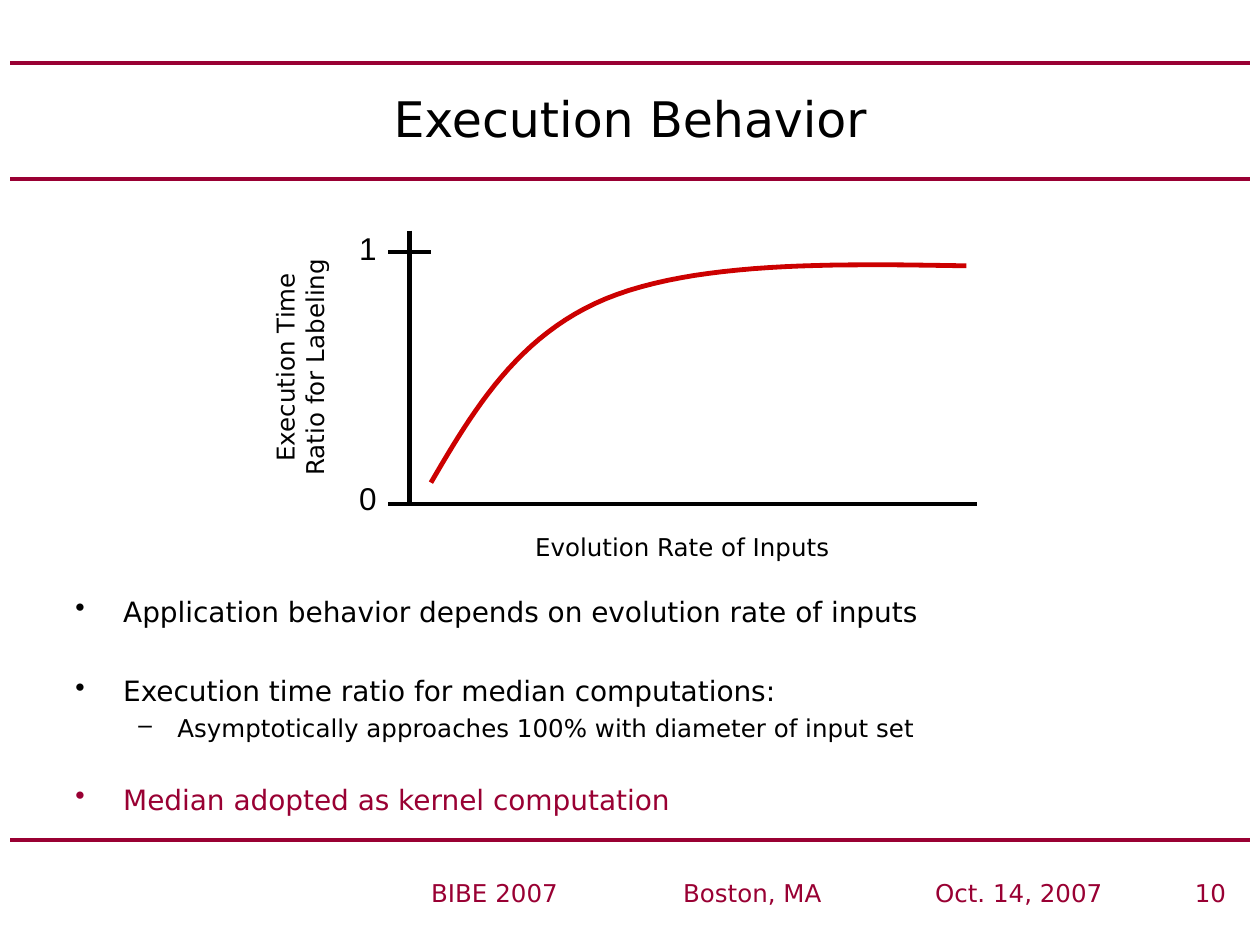
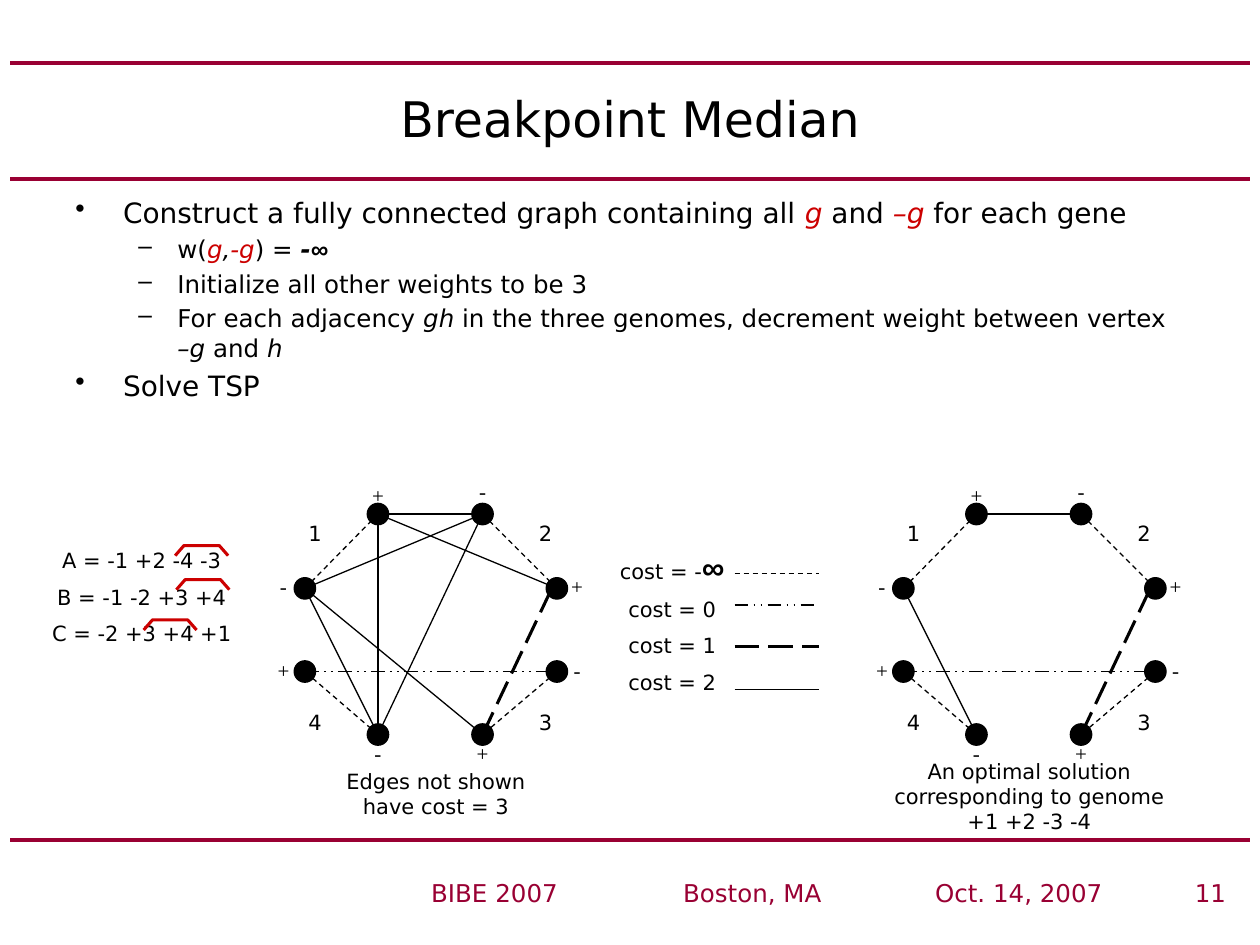
from lxml import etree
from pptx import Presentation
from pptx.dml.color import RGBColor
from pptx.enum.dml import MSO_LINE
from pptx.enum.shapes import MSO_CONNECTOR, MSO_SHAPE
from pptx.enum.text import MSO_ANCHOR, PP_ALIGN
from pptx.oxml.ns import qn
from pptx.util import Inches, Pt

MAROON = RGBColor(0x99, 0x00, 0x33)
RED = RGBColor(0xCC, 0x00, 0x00)
BLACK = RGBColor(0x00, 0x00, 0x00)
SANS, ARIAL, TIMES = "DejaVu Sans", "Arial", "Times New Roman"
LEFT, CENTER, RIGHT = PP_ALIGN.LEFT, PP_ALIGN.CENTER, PP_ALIGN.RIGHT
MIDDLE = MSO_ANCHOR.MIDDLE
STRAIGHT, OVAL = MSO_CONNECTOR.STRAIGHT, MSO_SHAPE.OVAL
DASH, DASH_DOT_DOT, LONG_DASH = MSO_LINE.DASH, MSO_LINE.DASH_DOT_DOT, MSO_LINE.LONG_DASH

# ---- Shared content
RULE_TOPS = (0.5, 1.42, 6.67)
FOOTER = "BIBE 2007\tBoston, MA\tOct. 14, 2007\t {}"
FOOTER_TABS = (2, 4, 6)
# level: bullet, left margin, hanging indent, text size, space before
LEVELS = {0: ("•", 0.38, 0.38, 16, 3.5), 1: ("–", 0.81, 0.31, 14, 3)}

# ---- Slide 10: (level, text, colour, space before or None for the level's own)
BEHAVIOR = [
    (0, "Application behavior depends on evolution rate of inputs", BLACK, None),
    (0, "Execution time ratio for median computations:", BLACK, 26),
    (1, "Asymptotically approaches 100% with diameter of input set", BLACK, None),
    (0, "Median adopted as kernel computation", MAROON, 23),
]
AXES = [((3.25, 1.83), (3.25, 4)), ((3.08, 2), (3.42, 2)), ((3.08, 4), (7.75, 4))]
TICKS = [("1", 1.77), ("0", 3.75)]
RATIO_CURVE = [
    ((3.42, 3.83), (3.76, 3.25), (4.11, 2.66), (4.81, 2.37)),
    ((4.81, 2.37), (5.52, 2.08), (6.59, 2.09), (7.67, 2.11)),
]

# ---- Slide 11: a run is plain text or (text, style)
ITALIC = {"italic": True}
GENE = {"italic": True, "color": RED}
INFINITY = {"bold": True, "italic": True, "font": ARIAL}
MEDIAN = [
    (0, ["Construct a fully connected graph containing all ", ("g ", GENE), "and ",
         ("–g", GENE), " for each gene"], BLACK, None),
    (1, ["w(", ("g", GENE), (",", ITALIC), ("-g", GENE), ") = ",
         ("-", {"bold": True, "italic": True}), ("∞", INFINITY)], BLACK, None),
    (1, "Initialize all other weights to be 3", BLACK, None),
    (1, ["For each adjacency ", ("gh", ITALIC),
         " in the three genomes, decrement weight between vertex ",
         ("–g", ITALIC), " and ", ("h", ITALIC)], BLACK, None),
    (0, "Solve TSP", BLACK, None),
]
GENOMES = ["A = -1 +2 -4 -3", "B = -1 -2 +3 +4", "C = -2 +3 +4 +1"]
ADJACENCY_MARKS = [(1.39, 4.33), (1.4, 4.6), (1.14, 4.92)]

# vertex: centre, and offset of its sign
VERTICES = {
    "1+": ((3, 4.08), (0, -0.15)),
    "2-": ((3.83, 4.08), (0, -0.18)),
    "1-": ((2.42, 4.67), (-0.17, -0.02)),
    "4+": ((2.42, 5.33), (-0.17, -0.01)),
    "4-": ((3, 5.83), (0, 0.15)),
    "3+": ((3.83, 5.83), (0, 0.15)),
    "2+": ((4.42, 4.67), (0.16, -0.02)),
    "3-": ((4.42, 5.33), (0.16, -0.01)),
}
GENE_NUMBERS = {"1": (2.5, 4.23), "2": (4.33, 4.23), "4": (2.5, 5.73), "3": (4.33, 5.73)}
# cost: line width, dash
COSTS = {
    "-∞": (0.75, DASH),
    "0": (1, DASH_DOT_DOT),
    "1": (1.75, LONG_DASH),
    "2": (0.75, None),
}
SHARED_EDGES = [
    ("1-", "1+", "-∞"), ("2+", "2-", "-∞"), ("4-", "4+", "-∞"), ("3-", "3+", "-∞"),
    ("4+", "3-", "0"), ("3+", "2+", "1"), ("4-", "1-", "2"), ("1+", "2-", "2"),
]
EXTRA_EDGES = [("4-", "1+", "2"), ("4-", "2-", "2"), ("3+", "1-", "2"),
               ("1-", "2-", "2"), ("1+", "2+", "2")]
# x offset, edges, caption, caption box
GRAPHS = [
    (0, SHARED_EDGES + EXTRA_EDGES, "Edges not shown have cost = 3",
     (2.5, 6.05, 1.92, 0.5)),
    (4.75, SHARED_EDGES, "An optimal solution corresponding to genome +1 +2 -3 -4",
     (6.92, 5.97, 2.5, 0.7)),
]
LEGEND = [["cost = -", ("∞", {**INFINITY, "size": 18})],
          "cost = 0", "cost = 1", "cost = 2"]
LEGEND_LINE_TOPS = (4.55, 4.8, 5.13, 5.47)
NODE = 0.17


# ---- Text
def set_font(font, size=None, name=None, color=None):
    if size:
        font.size = Pt(size)
    if name:
        font.name = name
    if color is not None:
        font.color.rgb = color


def fill_paragraph(paragraph, runs, size, name=SANS, color=BLACK, align=LEFT):
    paragraph.alignment = align
    set_font(paragraph.font, size, name, color)
    for part in [runs] if isinstance(runs, str) else runs:
        text, style = (part, {}) if isinstance(part, str) else part
        run = paragraph.add_run()
        run.text = text
        set_font(run.font, style.get("size"), style.get("font"), style.get("color"))
        if style.get("bold"):
            run.font.bold = True
        if style.get("italic"):
            run.font.italic = True


def add_frame(slide, box):
    shape = slide.shapes.add_textbox(*map(Inches, box))
    shape.text_frame.word_wrap = True
    return shape


def paragraphs_of(frame, count):
    return [frame.paragraphs[0]] + [frame.add_paragraph() for _ in range(count - 1)]


def add_label(slide, box, lines, size=12, name=SANS):
    label = add_frame(slide, box)
    lines = [lines] if isinstance(lines, str) else lines
    for i, paragraph in enumerate(paragraphs_of(label.text_frame, len(lines))):
        fill_paragraph(paragraph, lines[i], size, name, align=CENTER)
        if i:
            paragraph.space_before = Pt(6.3)
    return label


def add_centered_label(slide, x, y, text, name=SANS):
    add_label(slide, (x - 0.25, y - 0.15, 0.5, 0.3), text, name=name)


def add_bullets(slide, box, items):
    frame = add_frame(slide, box).text_frame
    for i, paragraph in enumerate(paragraphs_of(frame, len(items))):
        level, runs, color, gap = items[i]
        mark, margin, hanging, size, default_gap = LEVELS[level]
        properties = paragraph._p.get_or_add_pPr()
        properties.set("marL", str(Inches(margin)))
        properties.set("indent", str(-Inches(hanging)))
        etree.SubElement(properties, qn("a:buChar")).set("char", mark)
        if i:
            paragraph.space_before = Pt(gap or default_gap)
        fill_paragraph(paragraph, runs, size, color=color)


# ---- Lines
def add_line(slide, start, end, width, color=BLACK, dash=None):
    line = slide.shapes.add_connector(STRAIGHT, *map(Inches, (*start, *end)))
    line.line.color.rgb = color
    line.line.width = Pt(width)
    if dash is not None:
        line.line.dash_style = dash
    etree.SubElement(line._element.spPr, qn("a:effectLst"))


def add_open_path(slide, points, width, color):
    points = [(Inches(x), Inches(y)) for x, y in points]
    builder = slide.shapes.build_freeform(*points[0])
    builder.add_line_segments(points[1:], close=False)
    path = builder.convert_to_shape()
    path.shadow.inherit = False
    path.fill.background()
    path.line.color.rgb = color
    path.line.width = Pt(width)


def bezier_points(curve, steps=24):
    for i in range(steps + 1):
        t = i / steps
        weights = ((1 - t) ** 3, 3 * t * (1 - t) ** 2, 3 * t * t * (1 - t), t ** 3)
        yield tuple(sum(w * p[axis] for w, p in zip(weights, curve)) for axis in (0, 1))


# ---- Slides
def add_slide(deck, title, number):
    slide = deck.slides.add_slide(deck.slide_layouts[5])
    for top in RULE_TOPS:
        add_line(slide, (0.08, top), (9.92, top), 2.25, MAROON)

    footer = add_frame(slide, (2.83, 6.92, 7, 0.33)).text_frame.paragraphs[0]
    tabs = etree.SubElement(footer._p.get_or_add_pPr(), qn("a:tabLst"))
    for position in FOOTER_TABS:
        etree.SubElement(tabs, qn("a:tab"), pos=str(Inches(position)), algn="l")
    fill_paragraph(footer, FOOTER.format(number), 14, color=MAROON, align=RIGHT)

    heading = slide.shapes.title
    heading.left, heading.top, heading.width, heading.height = map(
        Inches, (0.5, 0.5, 9, 0.87))
    heading.text_frame.vertical_anchor = MIDDLE
    fill_paragraph(heading.text_frame.paragraphs[0], title, 28, align=CENTER)
    return slide


def add_graph(slide, dx, edges):
    centers = {key: (x + dx, y) for key, ((x, y), _) in VERTICES.items()}
    for key, (x, y) in centers.items():
        node = slide.shapes.add_shape(
            OVAL, *map(Inches, (x - NODE / 2, y - NODE / 2, NODE, NODE)))
        node.shadow.inherit = False
        node.fill.solid()
        node.fill.fore_color.rgb = BLACK
        node.line.color.rgb = BLACK
        node.line.width = Pt(0.75)
        sign_x, sign_y = VERTICES[key][1]
        add_centered_label(slide, x + sign_x, y + sign_y, key[1], TIMES)
    for gene, (x, y) in GENE_NUMBERS.items():
        add_centered_label(slide, x + dx, y, gene)
    for start, end, cost in edges:
        width, dash = COSTS[cost]
        end_x, end_y = centers[end]
        if cost == "1":  # the heavy edge stops at the top of its node
            end_y -= NODE / 2
        add_line(slide, centers[start], (end_x, end_y), width, dash=dash)


def build_behavior(deck):
    slide = add_slide(deck, "Execution Behavior", 10)
    for start, end in AXES:
        add_line(slide, start, end, 2.75)
    add_label(slide, (3.83, 4.17, 3.17, 0.33), "Evolution Rate of Inputs", 14)
    ratio = add_label(slide, (1.38, 2.63, 2, 0.57), "Execution Time Ratio for Labeling", 14)
    ratio.rotation = 270
    for value, top in TICKS:
        add_label(slide, (2.67, top, 0.5, 0.4), value, 18, ARIAL)
    first, second = map(list, map(bezier_points, RATIO_CURVE))
    add_open_path(slide, first + second[1:], 2.75, RED)
    add_bullets(slide, (0.5, 4.67, 9, 1.92), BEHAVIOR)


def build_median(deck):
    slide = add_slide(deck, "Breakpoint Median", 11)
    add_bullets(slide, (0.5, 1.5, 9, 5.08), MEDIAN)
    add_label(slide, (0.25, 4.3, 1.75, 0.9), GENOMES)
    for dx, edges, caption, box in GRAPHS:
        add_graph(slide, dx, edges)
        add_label(slide, box, caption)
    add_label(slide, (4.67, 4.3, 1.33, 1.3), LEGEND)
    for (width, dash), top in zip(COSTS.values(), LEGEND_LINE_TOPS):
        add_line(slide, (5.83, top), (6.5, top), width, dash=dash)
    for x, y in ADJACENCY_MARKS:
        mark = [(x, y + 0.08), (x + 0.07, y), (x + 0.35, y), (x + 0.42, y + 0.08)]
        add_open_path(slide, mark, 1.75, RED)


def main():
    deck = Presentation()
    deck.slide_width, deck.slide_height = Inches(10), Inches(7.5)
    build_behavior(deck)
    build_median(deck)
    deck.save("out.pptx")


if __name__ == "__main__":
    main()
